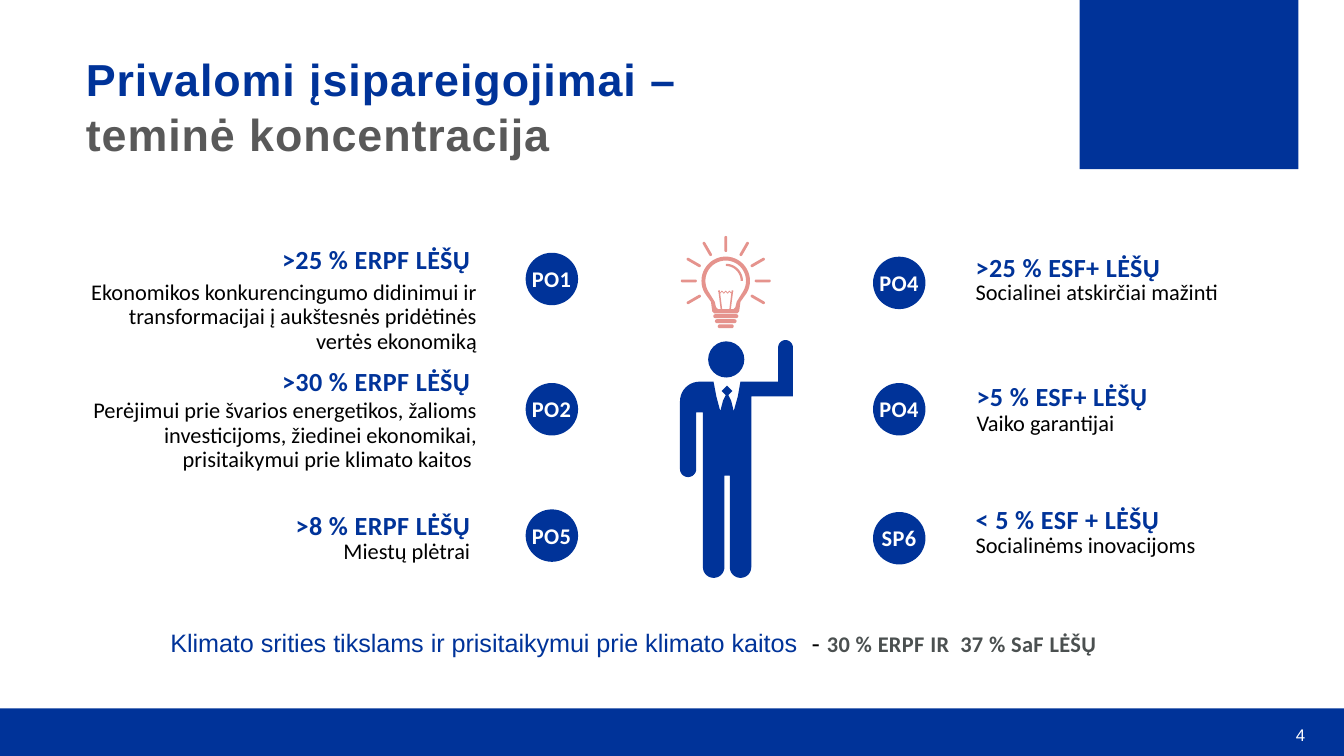
from dataclasses import dataclass
from math import cos, pi, radians, sin

from pptx import Presentation
from pptx.dml.color import RGBColor
from pptx.enum.shapes import MSO_SHAPE
from pptx.enum.text import MSO_ANCHOR, PP_ALIGN
from pptx.util import Pt


@dataclass(frozen=True)
class Theme:
    """Colours, fonts and type sizes of the slide."""
    blue: str = "003399"
    grey: str = "595959"
    slate: str = "4B5050"
    coral: str = "E5938D"
    black: str = "000000"
    white: str = "FFFFFF"
    display: str = "Arial"
    text: str = "Calibri"
    title: float = 24
    heading: float = 14
    climate: float = 13.5
    detail: float = 12
    number: float = 9


@dataclass(frozen=True)
class Commitment:
    """One funding share with its badge; edge is the aligned side of its detail."""
    code: str
    badge_top: float
    heading: str
    heading_top: float
    detail: str
    detail_top: float
    edge: float
    width: float = 180


THEME = Theme()
ERPF = [
    Commitment("PO1", 135.4, ">25 % ERPF LĖŠŲ", 130.3,
               "Ekonomikos konkurencingumo didinimui ir transformacijai į "
               "aukštesnės pridėtinės vertės ekonomiką", 150.5, 255.6, 208),
    Commitment("PO2", 205.2, ">30 % ERPF LĖŠŲ", 195.8,
               "Perėjimui prie švarios energetikos, žalioms investicijoms, "
               "žiedinei ekonomikai, prisitaikymui prie klimato kaitos ",
               213.8, 255.6, 208),
    Commitment("PO5", 272.9, ">8 % ERPF LĖŠŲ", 272.9, "Miestų plėtrai", 289.4, 252),
]
ESF = [
    Commitment("PO4", 137.5, ">25 % ESF+ LĖŠŲ", 134.6,
               "Socialinei atskirčiai mažinti", 150.5, 522.7),
    Commitment("PO4", 205.2, ">5 % ESF+ LĖŠŲ", 203.8, "Vaiko garantijai", 220.3, 523.2),
    Commitment("SP6", 274.3, "< 5 % ESF + LĖŠŲ", 269.3,
               "Socialinėms inovacijoms", 285.8, 522.7),
]
MAN_OUTLINE = [
    (424.8, 182.2, 4), (416.9, 182.2, 4), (416.9, 204.5, 0), (396.7, 204.5, 0),
    (395.3, 212.4, 0), (393.1, 220.3, 0), (391.7, 214.6, 0), (390.2, 211.7, 0),
    (392.4, 209.5, 0), (389.5, 206.6, 0), (386.6, 209.5, 0), (388.8, 211.7, 0),
    (387.4, 214.6, 0), (385.9, 220.3, 0), (383.8, 212.4, 0), (382.3, 204.5, 0),
    (364.3, 204.5, 10.5), (364.3, 255.6, 4.3), (373, 255.6, 4.3), (373, 221, 0),
    (376.6, 221, 0), (376.6, 309.6, 5.7), (388.1, 309.6, 5.7), (388.1, 254.9, 0),
    (391, 254.9, 0), (391, 309.6, 5.7), (402.5, 309.6, 5.7), (402.5, 212.4, 0),
    (424.8, 212.4, 0),
]


def paint(shape, color):
    """Give a shape a flat fill with no line or shadow."""
    shape.shadow.inherit = False
    shape.fill.solid()
    shape.fill.fore_color.rgb = RGBColor.from_string(color)
    shape.line.fill.background()
    return shape


def add_solid(shapes, preset, left, top, width, height, color):
    """Add a flat preset shape."""
    return paint(shapes.add_shape(preset, Pt(left), Pt(top), Pt(width), Pt(height)), color)


def add_outline(shapes, contours, color):
    """Add one freeform made of closed contours."""
    builder = None
    for contour in contours:
        start, *rest = [(Pt(x), Pt(y)) for x, y in contour]
        if builder is None:
            builder = shapes.build_freeform(*start, scale=1.0)
        else:
            builder.move_to(*start)
        builder.add_line_segments(rest, close=True)
    return paint(builder.convert_to_shape(), color)


def add_run(paragraph, text, size, font, color, bold=False, spacing=0):
    """Append a run, with letter spacing in points."""
    run = paragraph.add_run()
    run.text = text
    run.font.size = Pt(size)
    run.font.name = font
    run.font.bold = bold
    run.font.color.rgb = RGBColor.from_string(color)
    if spacing:
        run.font._element.set("spc", str(round(spacing * 100)))


def prepare_text(shape, align, inset=(0, 0), leading=None, wrap=True):
    """Set up the text frame of a shape and return its first paragraph."""
    frame = shape.text_frame
    frame.word_wrap = wrap
    frame.margin_left = frame.margin_right = Pt(inset[0])
    frame.margin_top = frame.margin_bottom = Pt(inset[1])
    paragraph = frame.paragraphs[0]
    paragraph.alignment = align
    if leading:
        paragraph.line_spacing = Pt(leading)
    return paragraph


def add_text(shapes, left, top, width, height, align=PP_ALIGN.LEFT, **options):
    """Add a text box and return its first paragraph."""
    box = shapes.add_textbox(Pt(left), Pt(top), Pt(width), Pt(height))
    return prepare_text(box, align, **options)


def add_badge(shapes, code, left, top):
    """Add a round badge with its code."""
    badge = shapes.add_group_shape().shapes
    add_solid(badge, MSO_SHAPE.OVAL, left, top, 28.1, 28.1, THEME.blue)
    label = add_solid(badge, MSO_SHAPE.RECTANGLE, left + 2.7, top + 6.6, 22.3, 14.6, THEME.blue)
    label.text_frame.vertical_anchor = MSO_ANCHOR.MIDDLE
    paragraph = prepare_text(label, PP_ALIGN.CENTER, wrap=False)
    add_run(paragraph, code, THEME.detail, THEME.text, THEME.white, True, 0.2)


def add_commitments(shapes, commitments, badge_left, align):
    """Add a column of badges, headings and details."""
    for item in commitments:
        add_badge(shapes, item.code, badge_left, item.badge_top)
        on_right = align == PP_ALIGN.RIGHT
        heading_left = 72 if on_right else item.edge
        detail_left = item.edge - item.width if on_right else item.edge
        heading = add_text(shapes, heading_left, item.heading_top, 180, 17, align, leading=17)
        add_run(heading, item.heading, THEME.heading, THEME.text, THEME.blue, True, 0.2)
        detail_height = 39 if item.width > 180 else 13
        detail = add_text(shapes, detail_left, item.detail_top, item.width, detail_height,
                          align, leading=13)
        add_run(detail, item.detail, THEME.detail, THEME.text, THEME.black)


def arc(x, y, radius, start, end, steps=32):
    """Return points along a circular arc, with angles in degrees."""
    angles = [radians(start + (end - start) * i / steps) for i in range(steps + 1)]
    return [(x + radius * cos(a), y + radius * sin(a)) for a in angles]


def round_corners(vertices, steps=10):
    """Return an axis-aligned outline with its marked corners rounded."""
    points = []
    for i, (x, y, radius) in enumerate(vertices):
        if not radius:
            points.append((x, y))
            continue
        before, after = vertices[i - 1], vertices[(i + 1) % len(vertices)]
        ux, uy = [(b > a) - (b < a) for a, b in zip((x, y), before)]
        vx, vy = [(b > a) - (b < a) for a, b in zip((x, y), after)]
        for step in range(steps + 1):
            turn = pi / 2 * step / steps
            p, q = radius * (1 - sin(turn)), radius * (1 - cos(turn))
            points.append((x + ux * p + vx * q, y + uy * p + vy * q))
    return points


def add_man(shapes):
    """Add the figure with a raised arm."""
    man = shapes.add_group_shape().shapes
    add_solid(man, MSO_SHAPE.OVAL, 379.4, 182.9, 19.4, 19.4, THEME.blue)
    add_outline(man, [round_corners(MAN_OUTLINE)], THEME.blue)


def glass_contour(x, y, radius, neck, bottom):
    """Return the round glass of a bulb narrowing to its neck."""
    return arc(x, y, radius, 150, 390) + [
        (x + neck + 0.7, y + 11.2), (x + neck, bottom - 1), (x + neck - 1, bottom),
        (x - neck + 1, bottom), (x - neck, bottom - 1), (x - neck - 0.7, y + 11.2)]


def add_bulb(shapes, x=388.8, y=150.5):
    """Add the shining light bulb around its centre."""
    bulb = shapes.add_group_shape().shapes

    def add_bar(center_x, center_y, length, thickness, angle=0):
        """Add a round-ended bar."""
        bar = add_solid(bulb, MSO_SHAPE.ROUNDED_RECTANGLE, center_x - length / 2,
                        center_y - thickness / 2, length, thickness, THEME.coral)
        bar.adjustments[0] = 0.5
        bar.rotation = angle % 360

    for angle in range(150, 391, 30):
        turn = radians(angle)
        add_bar(x + 19.8 * cos(turn), y + 19.8 * sin(turn), 8.6, 1.5, angle)
    for row, length in enumerate((13.4, 11.6, 8.6)):
        add_bar(x, 169.4 + 2.7 * row, length, 2.1)
    glass = [glass_contour(x, y, 13, 7.2, 167.9), glass_contour(x, y, 10.9, 5.2, 165.6)]
    add_outline(bulb, glass, THEME.coral)
    add_outline(bulb, [arc(x, y, 9.2, -90, 0) + arc(x, y, 8, 0, -90)], THEME.coral)
    for side in (-1, 1):
        leg = [(x + side * dx, py) for dx, py in
               ((4, 155.5), (3.2, 155.5), (1.7, 167.5), (2.5, 167.5))]
        add_outline(bulb, [leg], THEME.coral)
    wave = [(x - 4 + i / 5, 156.2 - 0.45 * cos(2 * pi * i / 10)) for i in range(41)]
    add_outline(bulb, [wave + [(px, py + 0.6) for px, py in reversed(wave)]], THEME.coral)


def main():
    """Build and save the slide."""
    deck = Presentation()
    deck.slide_width, deck.slide_height = Pt(720), Pt(405)
    shapes = deck.slides.add_slide(deck.slide_layouts[6]).shapes

    add_solid(shapes, MSO_SHAPE.RECTANGLE, 0, 379.6, 720, 25.4, THEME.blue)
    add_solid(shapes, MSO_SHAPE.RECTANGLE, 578.4, 0, 117.2, 90.6, THEME.blue)
    number = add_text(shapes, 682.6, 388, 16.6, 10.8, PP_ALIGN.RIGHT)
    add_run(number, "4", THEME.number, THEME.display, THEME.white, spacing=0.3)

    title = add_text(shapes, 46, 27.7, 370, 60, leading=29)
    for text, color in (("Privalomi įsipareigojimai – ", THEME.blue),
                        ("teminė koncentracija", THEME.grey)):
        add_run(title, text, THEME.title, THEME.display, color, True, 0.5)

    add_man(shapes)
    add_bulb(shapes)
    add_commitments(shapes, ERPF, 281.6, PP_ALIGN.RIGHT)
    add_commitments(shapes, ESF, 467.7, PP_ALIGN.LEFT)

    climate = add_text(shapes, 84.2, 332.7, 512, 40.3, inset=(7.2, 3.6))
    add_run(climate, "Klimato srities tikslams ir prisitaikymui prie klimato kaitos  ",
            THEME.climate, THEME.display, THEME.blue)
    add_run(climate, "- ", THEME.climate, THEME.display, THEME.black)
    add_run(climate, "30 % ERPF IR  37 % SaF LĖŠŲ", THEME.detail, THEME.text,
            THEME.slate, True, 0.2)
    deck.save("out.pptx")


if __name__ == "__main__":
    main()
